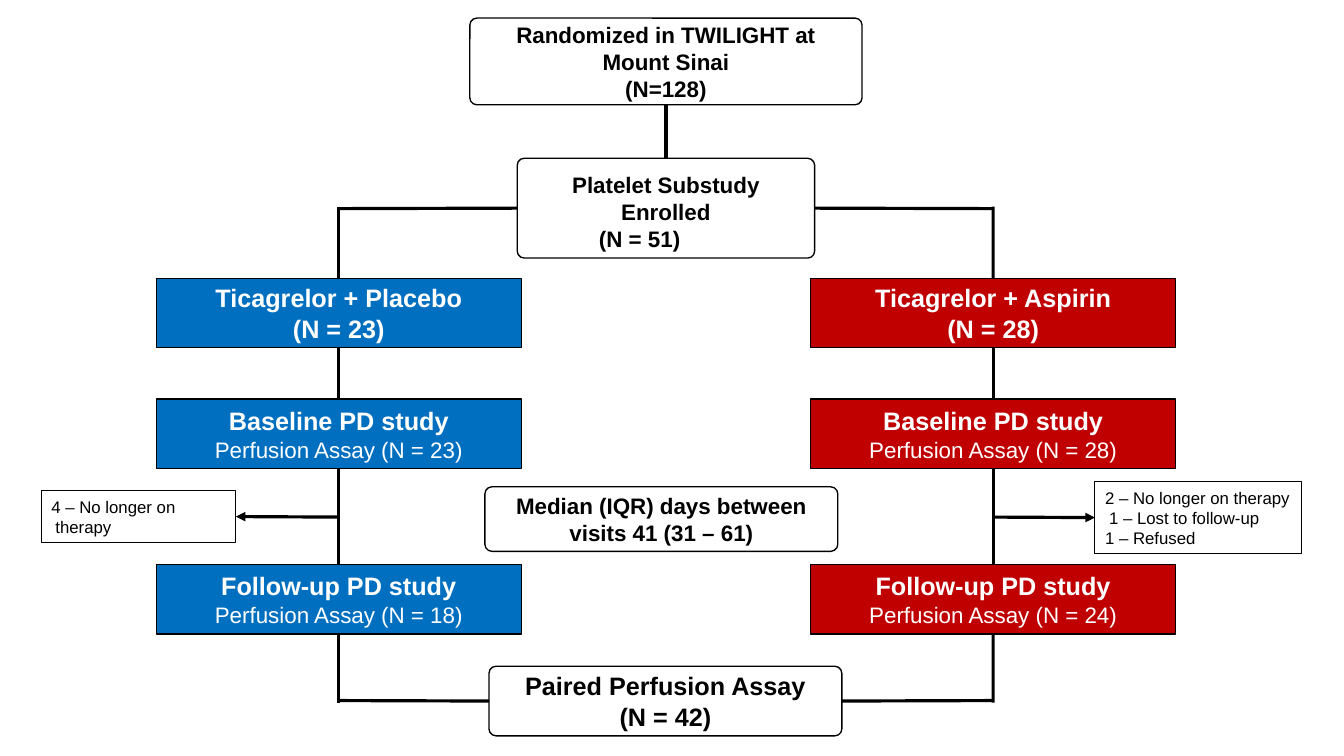
from lxml import etree
from pptx import Presentation
from pptx.dml.color import RGBColor
from pptx.enum import shapes, text
from pptx.oxml import ns
from pptx.util import Inches, Pt

COLORS = {"black": "000000", "white": "FFFFFF", "blue": "006FC0", "red": "C00000"}
RECT, ROUND = shapes.MSO_SHAPE.RECTANGLE, shapes.MSO_SHAPE.ROUNDED_RECTANGLE
TOP, LEFT, BOTTOM, RIGHT = range(4)

prs = Presentation()
prs.slide_width, prs.slide_height = Inches(13.33), Inches(7.5)
s = prs.slides.add_slide(prs.slide_layouts[6])


def add_box(kind, x, y, w, h, fill="white", line=0.96):
    sp = s.shapes.add_shape(kind, Inches(x), Inches(y), Inches(w), Inches(h))
    sp.shadow.inherit = False
    sp.fill.solid()
    sp.fill.fore_color.rgb = RGBColor.from_string(COLORS[fill])
    sp.line.color.rgb = RGBColor.from_string(COLORS["black"])
    sp.line.width = Pt(line)
    if kind == ROUND:
        sp.adjustments[0] = 0.07 / h
    tf = sp.text_frame
    tf.word_wrap = True
    tf.vertical_anchor = text.MSO_ANCHOR.MIDDLE
    tf.margin_left = tf.margin_right = tf.margin_top = tf.margin_bottom = 0
    return sp


def write(sp, words, size=16, bold=True, color="black", indent=None, hang=0):
    """Append a paragraph: centred, or left-aligned when an indent is given."""
    tf = sp.text_frame
    p = tf.add_paragraph() if tf.text else tf.paragraphs[0]
    p.text = words
    p.alignment = text.PP_ALIGN.CENTER if indent is None else text.PP_ALIGN.LEFT
    if indent is not None:
        pPr = p._p.get_or_add_pPr()
        pPr.set("marL", str(Inches(indent + hang)))
        pPr.set("indent", str(Inches(-hang)))
    for r in p.runs:
        r.font.name, r.font.size, r.font.bold = "Arial", Pt(size), bold
        r.font.color.rgb = RGBColor.from_string(COLORS[color])


# Central column
randomized = add_box(ROUND, 4.66, 0.18, 3.89, 0.86)
write(randomized, "Randomized in TWILIGHT at\vMount Sinai")
write(randomized, "(N=128)")

substudy = add_box(ROUND, 5.13, 1.57, 2.95, 0.99)
substudy.text_frame.margin_top = Inches(0.07)
write(substudy, "Platelet Substudy\vEnrolled")
write(substudy, "(N = 51)", indent=0.79)

median = add_box(ROUND, 4.81, 4.83, 3.5, 0.64)
write(median, "Median (IQR) days between\vvisits 41 (31 – 61)")

paired = add_box(ROUND, 4.85, 6.61, 3.5, 0.69)
write(paired, "Paired Perfusion Assay\v(N = 42)", size=18)

# Dropout notes
left_note = add_box(RECT, 0.41, 4.87, 1.93, 0.51, line=0.72)
write(left_note, "4 – No longer on\vtherapy", size=12, bold=False, indent=0.1, hang=0.04)
right_note = add_box(RECT, 10.86, 4.78, 2.05, 0.71, line=0.72)
for words, indent in [("2 – No longer on therapy", 0.1), ("1 – Lost to follow-up", 0.14),
                      ("1 – Refused", 0.1)]:
    write(right_note, words, size=12, bold=False, indent=indent)

# Treatment arms; each link is start, end, joint at start, joint at end, arrow
ARM_W, ARM_H, LINE_HALF = 3.62, 0.69, 0.02
SPLIT_Y, NOTE_Y, MERGE_Y = 2.07, 5.13, 6.95
links = [((6.6, 1.04), (6.6, 1.57), (randomized, BOTTOM), (substudy, TOP), False)]
arms = [
    (1.55, "blue", "Placebo", (23, 23, 18), LEFT, left_note, RIGHT, 2.34),
    (8.04, "red", "Aspirin", (28, 28, 24), RIGHT, right_note, LEFT, 10.86),
]
for x, fill, partner, counts, side, note, note_side, note_x in arms:
    mid = x + ARM_W / 2
    treatment, baseline, followup = [
        add_box(RECT, x, y, ARM_W, ARM_H, fill) for y in (2.76, 3.96, 5.6)]
    write(treatment, f"Ticagrelor + {partner}\v(N = {counts[0]})", size=18, color="white")
    for sp, visit, n in [(baseline, "Baseline", counts[1]), (followup, "Follow-up", counts[2])]:
        write(sp, f"{visit} PD study", size=18, color="white")
        write(sp, f"Perfusion Assay (N = {n})", bold=False, color="white")
    links += [
        ((6.6, SPLIT_Y), (mid, SPLIT_Y), (substudy, side), None, False),
        ((mid, SPLIT_Y - LINE_HALF), (mid, 2.76), None, (treatment, TOP), False),
        ((mid, 3.45), (mid, 3.96), (treatment, BOTTOM), (baseline, TOP), False),
        ((mid, 4.65), (mid, 5.6), (baseline, BOTTOM), (followup, TOP), False),
        ((mid, NOTE_Y), (note_x, NOTE_Y), None, (note, note_side), True),
        ((mid, 6.29), (mid, MERGE_Y + LINE_HALF), (followup, BOTTOM), None, False),
        ((mid, MERGE_Y), (6.6, MERGE_Y), None, (paired, side), False),
    ]

for start, end, start_joint, end_joint, arrow in links:
    link = s.shapes.add_connector(shapes.MSO_CONNECTOR.STRAIGHT,
                                  *[Inches(v) for v in start + end])
    if start_joint:
        link.begin_connect(*start_joint)
    if end_joint:
        link.end_connect(*end_joint)
    link.line.color.rgb = RGBColor.from_string(COLORS["black"])
    link.line.width = Pt(2.28)
    if arrow:
        etree.SubElement(link.line._get_or_add_ln(), ns.qn("a:tailEnd"), type="triangle")
    etree.SubElement(link._element.spPr, ns.qn("a:effectLst"))

prs.save("out.pptx")
